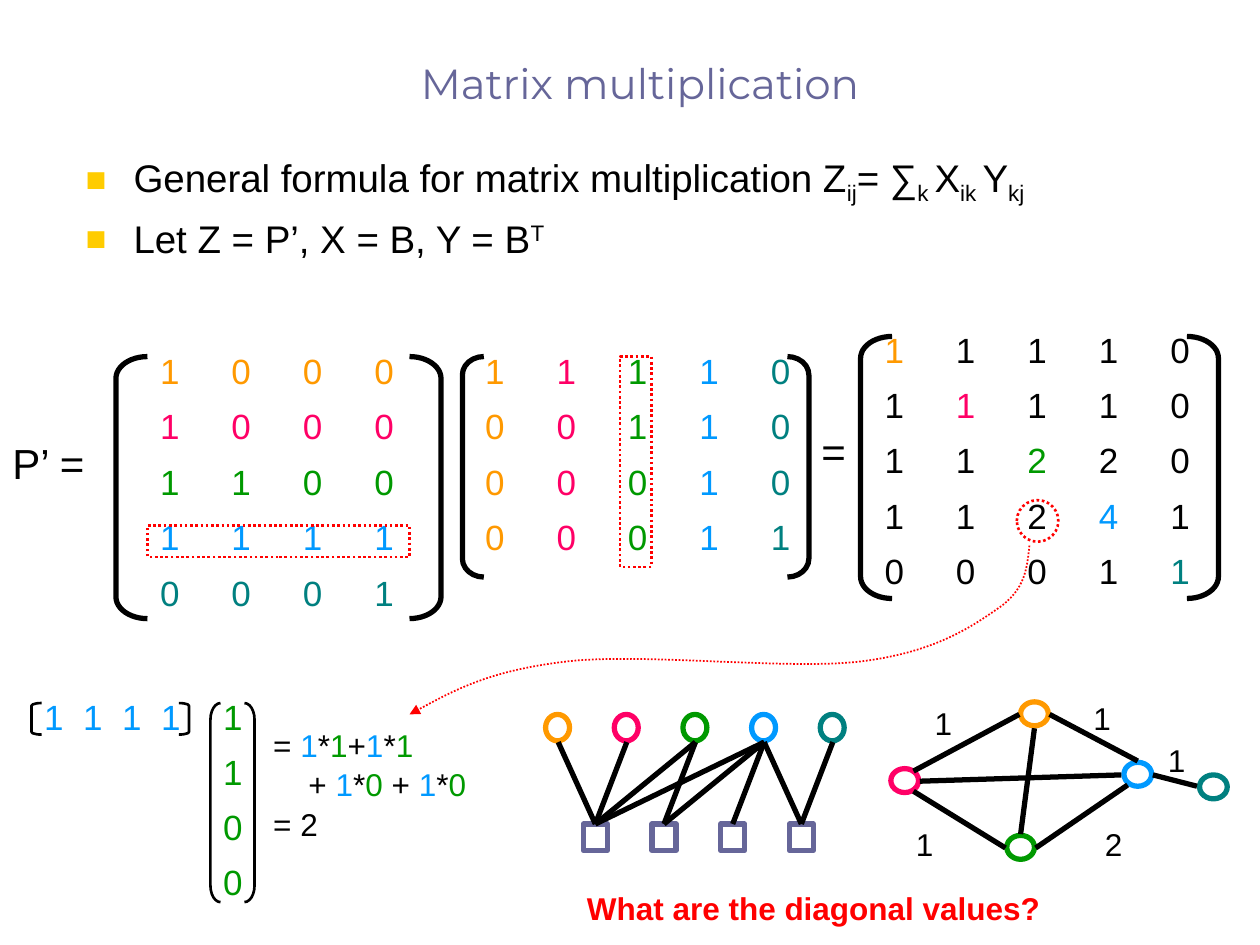
from dataclasses import dataclass
from typing import Callable

from lxml import etree
from pptx import Presentation
from pptx import util as u
from pptx.dml.color import RGBColor
from pptx.enum import dml, shapes, text
from pptx.oxml.ns import qn

BLACK = RGBColor(0x00, 0x00, 0x00)
RED = RGBColor(0xFF, 0x00, 0x00)
SLATE = RGBColor(0x66, 0x66, 0x99)
GOLD = RGBColor(0xFF, 0x99, 0x00)
PINK = RGBColor(0xFF, 0x00, 0x66)
GREEN = RGBColor(0x00, 0x99, 0x00)
BLUE = RGBColor(0x00, 0x99, 0xFF)
TEAL = RGBColor(0x00, 0x80, 0x80)
HUES = (GOLD, PINK, GREEN, BLUE, TEAL)
PLAIN = "{2D5ABB26-0587-4C30-8999-92F81FD0307C}"  # no style, no grid
KIND = shapes.MSO_SHAPE


@dataclass
class Grid:
    left: float
    top: float
    wide: float
    high: float
    rows: list[str]
    tint: Callable[[int, int], RGBColor]


@dataclass
class Pair:
    """Left and right brackets of one matrix."""
    left: float
    right: float
    top: float
    wide: float
    high: float
    pt: float = 3


@dataclass
class Label:
    left: float
    top: float
    wide: float
    high: float
    words: str
    size: int = 18
    color: RGBColor = BLACK
    bold: bool = False


GRIDS = [
    Grid(1.17, 2.75, 0.567, 0.44, ["1000", "1000", "1100", "1111", "0001"],
         lambda row, col: HUES[row]),
    Grid(3.75, 2.75, 0.567, 0.44, ["11110", "00110", "00010", "00011", "     "],
         lambda row, col: HUES[col]),
    Grid(6.92, 2.58, 0.567, 0.44, ["11110", "11110", "11220", "11241", "00011"],
         lambda row, col: HUES[row] if row == col else BLACK),
    Grid(0.25, 5.5, 0.31, 0.43, ["1111"], lambda row, col: BLUE),
    Grid(1.67, 5.5, 0.33, 0.435, ["1", "1", "0", "0"], lambda row, col: GREEN),
]
PAIRS = [
    Pair(0.92, 3.25, 2.83, 0.25, 2.08),
    Pair(3.67, 6.25, 2.83, 0.17, 1.75),
    Pair(6.83, 9.42, 2.67, 0.25, 2.08),
    Pair(0.25, 1.42, 5.58, 0.08, 0.25, 1.5),
    Pair(1.67, 1.94, 5.58, 0.08, 1.58, 1.5),
]
LABELS = [
    Label(0, 3.42, 0.78, 0.51, "P’ =", 24),
    Label(6.42, 3.33, 0.4, 0.5, "=", 24),
    Label(7.32, 5.54, 0.34, 0.4, "1"),
    Label(8.58, 5.5, 0.34, 0.4, "1"),
    Label(7.17, 6.5, 0.34, 0.4, "1"),
    Label(8.67, 6.5, 0.34, 0.4, "2"),
    Label(9.17, 5.83, 0.34, 0.4, "1"),
    Label(4.56, 7.01, 3.83, 0.4, "What are the diagonal values?", 18, RED, True),
]
NODES = [(8.1, 5.57), (7.07, 6.1), (7.99, 6.63), (8.92, 6.05), (9.52, 6.15)]
EDGES = [
    (8.09, 5.67, 7.25, 6.12), (8.21, 5.78, 8.1, 6.62), (8.33, 5.67, 9.03, 6.04),
    (7.25, 6.28, 7.98, 6.73), (8.95, 6.23, 8.22, 6.73), (9.5, 6.24, 9.15, 6.15),
    (8.9, 6.15, 7.3, 6.2),
]
LINKS = [(0, 0), (1, 0), (2, 0), (2, 1), (4, 3), (3, 0), (3, 1), (3, 2), (3, 3)]
CURVE = [
    (8.17, 4.33), (8.15, 4.51), (8.14, 4.68), (7.92, 4.83), (7.69, 4.99),
    (7.4, 5.18), (6.83, 5.25), (6.26, 5.32), (5.1, 5.18), (4.5, 5.25),
    (3.9, 5.32), (3.58, 5.49), (3.25, 5.67),
]
SUMS = [
    [("= ", BLACK), ("1", BLUE), ("*", BLACK), ("1", GREEN), ("+", BLACK),
     ("1", BLUE), ("*", BLACK), ("1", GREEN)],
    [("+ ", BLACK), ("1", BLUE), ("*", BLACK), ("0", GREEN), (" + ", BLACK),
     ("1", BLUE), ("*", BLACK), ("0", GREEN)],
    [("= 2", BLACK)],
]
POINTS = [
    [("General formula for matrix multiplication Z", 0), ("ij", -25), ("= ∑", 0),
     ("k ", -25), ("X", 0), ("ik ", -25), ("Y", 0), ("kj", -25)],
    [("Let Z = P’, X = B, Y = B", 0), ("T", 30)],
]


def inch(*sizes: float) -> list[u.Length]:
    return [u.Inches(size) for size in sizes]


def style(font, size: int, color: RGBColor, name: str = "Arial", bold: bool = False) -> None:
    font.size, font.name, font.bold = u.Pt(size), name, bold
    font.color.rgb = color


def outline(shape, color: RGBColor, pt: float, dots: bool = False) -> None:
    shape.shadow.inherit = False
    shape.fill.background()
    shape.line.color.rgb = color
    shape.line.width = u.Pt(pt)
    if dots:
        shape.line.dash_style = dml.MSO_LINE.ROUND_DOT


def draw_shape(slide, kind, box, color: RGBColor, pt: float = 3, dots: bool = False):
    shape = slide.shapes.add_shape(kind, *inch(*box))
    outline(shape, color, pt, dots)
    return shape


def draw_line(slide, ends):
    line = slide.shapes.add_connector(shapes.MSO_CONNECTOR.STRAIGHT, *inch(*ends))
    line.line.color.rgb = BLACK
    line.line.width = u.Pt(3)
    etree.SubElement(line._element.spPr, qn("a:effectLst"))
    return line


def draw_grid(slide, grid: Grid) -> None:
    rows, cols = len(grid.rows), len(grid.rows[0])
    size = inch(grid.left, grid.top, grid.wide * cols, grid.high * rows)
    table = slide.shapes.add_table(rows, cols, *size).table
    table.first_row = table.horz_banding = False
    table._tbl.tblPr.find(qn("a:tableStyleId")).text = PLAIN
    for row, digits in enumerate(grid.rows):
        for col, digit in enumerate(digits):
            cell = table.cell(row, col)
            cell.fill.background()
            cell.text_frame.text = digit.strip()
            style(cell.text_frame.paragraphs[0].font, 20, grid.tint(row, col))
            for run in cell.text_frame.paragraphs[0].runs:
                style(run.font, 20, grid.tint(row, col))


def draw_pair(slide, pair: Pair) -> None:
    for left in (pair.left, pair.right):
        box = (left, pair.top, pair.wide, pair.high)
        kind = KIND.LEFT_BRACKET if left == pair.left else KIND.RIGHT_BRACKET
        shape = draw_shape(slide, kind, box, BLACK, pair.pt)
        shape.adjustments[0] = pair.high / pair.wide / 12


def add_box(slide, *box: float):
    frame = slide.shapes.add_textbox(*inch(*box)).text_frame
    frame.word_wrap = False
    frame.auto_size = text.MSO_AUTO_SIZE.SHAPE_TO_FIT_TEXT
    return frame


def draw_label(slide, label: Label) -> None:
    frame = add_box(slide, label.left, label.top, label.wide, label.high)
    frame.text = label.words
    style(frame.paragraphs[0].runs[0].font, label.size, label.color, bold=label.bold)


def draw_sums(slide) -> None:
    frame = add_box(slide, 2.07, 5.71, 1.73, 1)
    for row, parts in enumerate(SUMS):
        para = frame.add_paragraph() if row else frame.paragraphs[0]
        if row:
            para.space_before = u.Pt(1)
        if row == 1:
            para._p.get_or_add_pPr().set("marL", str(u.Inches(0.28)))
        for words, color in parts:
            run = para.add_run()
            run.text = words
            style(run.font, 18, color)


def draw_curve(slide) -> None:
    """Draw the dotted arrow, each three points after the first being one Bézier."""
    start, *rest = [inch(*point) for point in CURVE]
    maker = slide.shapes.build_freeform(*start)
    maker.add_line_segments(rest, close=False)
    shape = maker.convert_to_shape()
    outline(shape, RED, 1, True)
    etree.SubElement(shape.line._get_or_add_ln(), qn("a:tailEnd"), type="triangle")
    track = shape._element.spPr.find(".//" + qn("a:path"))
    steps = track.findall(qn("a:lnTo"))
    for first in range(0, len(steps), 3):
        bend = etree.SubElement(track, qn("a:cubicBezTo"))
        for step in steps[first:first + 3]:
            bend.append(step[0])
            track.remove(step)


def fill_title(title) -> None:
    title.left, title.top, title.width, title.height = inch(0.58, 0.33, 9, 0.58)
    frame = title.text_frame
    frame.text = "Matrix multiplication"
    frame.auto_size = text.MSO_AUTO_SIZE.NONE
    frame.vertical_anchor = text.MSO_ANCHOR.BOTTOM
    frame.paragraphs[0].alignment = text.PP_ALIGN.CENTER
    style(frame.paragraphs[0].runs[0].font, 24, SLATE, "Montserrat")


def fill_body(body) -> None:
    body.left, body.top, body.width, body.height = inch(0.58, 1.17, 9, 5.5)
    frame = body.text_frame
    frame.auto_size = text.MSO_AUTO_SIZE.NONE
    for row, parts in enumerate(POINTS):
        para = frame.add_paragraph() if row else frame.paragraphs[0]
        props = para._p.get_or_add_pPr()
        props.set("marL", str(u.Inches(0.38)))
        props.set("indent", str(u.Inches(-0.38)))
        tone = etree.SubElement(props, qn("a:buClr"))
        etree.SubElement(tone, qn("a:srgbClr"), val="FFCC00")
        etree.SubElement(props, qn("a:buSzPct"), val="90000")
        etree.SubElement(props, qn("a:buFont"), typeface="Arial")
        etree.SubElement(props, qn("a:buChar"), char="■")
        para.space_before = u.Pt(5 if row else 0)
        for words, shift in parts:
            run = para.add_run()
            run.text = words
            style(run.font, 22, BLACK)
            if shift:
                run._r.get_or_add_rPr().set("baseline", str(shift * 1000))


def draw_graphs(slide) -> None:
    for (left, top), hue in zip(NODES, HUES):
        draw_shape(slide, KIND.OVAL, (left, top, 0.22, 0.19), hue)
    for edge in EDGES:
        draw_line(slide, edge)
    step = 0.545
    for col, hue in enumerate(HUES):
        draw_shape(slide, KIND.OVAL, (4.33 + col * step, 5.67, 0.19, 0.21), hue)
    squares = [draw_shape(slide, KIND.RECTANGLE, (4.63 + col * step, 6.54, 0.19, 0.21), SLATE)
               for col in range(4)]
    for node, square in LINKS:
        line = draw_line(slide, (4.43 + node * step, 5.89, 4.72 + square * step, 6.53))
        line.end_connect(squares[square], 0)


def main() -> None:
    deck = Presentation()
    deck.slide_width, deck.slide_height = inch(10, 7.5)
    slide = deck.slides.add_slide(deck.slide_layouts[1])
    fill_title(slide.shapes.title)
    fill_body(slide.placeholders[1])
    for grid in GRIDS:
        draw_grid(slide, grid)
    for pair in PAIRS:
        draw_pair(slide, pair)
    draw_graphs(slide)
    for label in LABELS:
        draw_label(slide, label)
    draw_sums(slide)
    draw_shape(slide, KIND.OVAL, (8.07, 3.97, 0.33, 0.33), RED, 1.5, True)
    draw_curve(slide)
    for box in ((1.17, 4.17, 2.08, 0.25), (4.92, 2.83, 0.25, 1.67)):
        draw_shape(slide, KIND.RECTANGLE, box, RED, 1.5, True)
    deck.save("out.pptx")


if __name__ == "__main__":
    main()
